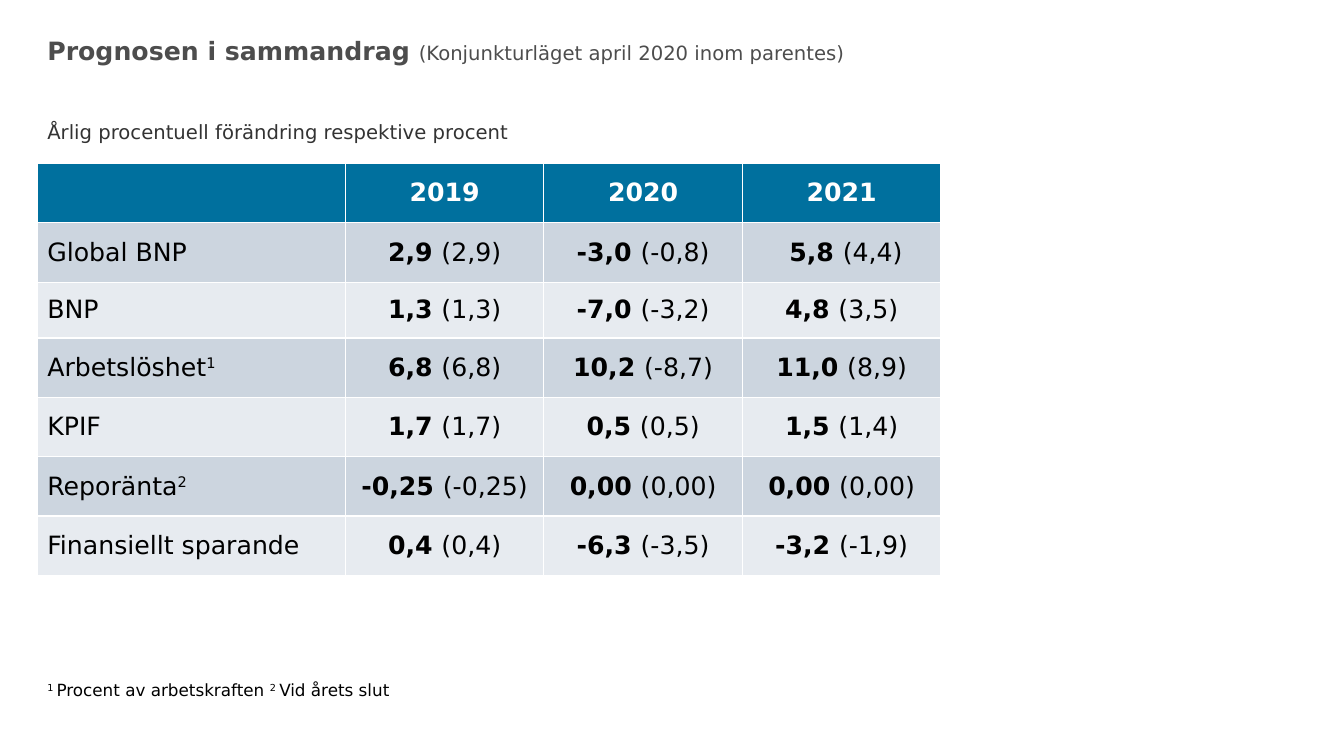
import pptx
import pptx.dml.color
import pptx.enum.text
import pptx.util

Pt = pptx.util.Pt
ALIGN = pptx.enum.text.PP_ALIGN
ANCHOR = pptx.enum.text.MSO_ANCHOR

ROWS = [
    ("Global BNP", "", ["2,9 (2,9)", "-3,0 (-0,8)", " 5,8 (4,4)"]),
    ("BNP", "", ["1,3 (1,3)", "-7,0 (-3,2)", "4,8 (3,5)"]),
    ("Arbetslöshet", "1", ["6,8 (6,8)", "10,2 (-8,7)", "11,0 (8,9)"]),
    ("KPIF", "", ["1,7 (1,7)", "0,5 (0,5)", "1,5 (1,4)"]),
    ("Reporänta", "2", ["-0,25 (-0,25)", "0,00 (0,00)", "0,00 (0,00)"]),
    ("Finansiellt sparande", "", ["0,4 (0,4)", "-6,3 (-3,5)", "-3,2 (-1,9)"]),
]


def rgb(value):
    return pptx.dml.color.RGBColor.from_string(value)


class Deck:
    font = "DejaVu Sans"
    left = 26.6
    header_fill = "00709E"
    band_fills = ("CCD5DF", "E7EBF0")

    def __init__(self, width, height):
        self.prs = pptx.Presentation()
        self.prs.slide_width, self.prs.slide_height = Pt(width), Pt(height)

    def add_slide(self, layout):
        self.s = self.prs.slides.add_slide(self.prs.slide_layouts[layout])

    def fill_text(self, p, runs, size, color, align=ALIGN.LEFT, bold=False):
        p.alignment = align
        p.space_before = Pt(0)
        p.font.name = self.font
        p.font.size = Pt(size)
        p.font.bold = bold
        p.font.color.rgb = rgb(color)
        for text, style in runs:
            r = p.add_run()
            r.text = text
            if "bold" in style:
                r.font.bold = style["bold"]
            if "size" in style:
                r.font.size = Pt(style["size"])
            if style.get("sup"):
                r._r.get_or_add_rPr().set("baseline", "30000")

    def placeholder(self, idx, top, height, runs, size, color, anchor=ANCHOR.TOP):
        sp = self.s.placeholders[idx]
        sp.left, sp.top = Pt(self.left), Pt(top)
        sp.width, sp.height = Pt(682), Pt(height)
        tf = sp.text_frame
        tf.auto_size = pptx.enum.text.MSO_AUTO_SIZE.NONE
        tf.vertical_anchor = anchor
        self.fill_text(tf.paragraphs[0], runs, size, color)

    def cell(self, cell, runs, fill, color="000000", **style):
        cell.fill.solid()
        cell.fill.fore_color.rgb = rgb(fill)
        cell.vertical_anchor = ANCHOR.MIDDLE
        self.fill_text(cell.text_frame.paragraphs[0], runs, 18, color, **style)

    def table(self, top, widths, heights, header, rows):
        table = self.s.shapes.add_table(
            len(heights), len(widths), Pt(self.left), Pt(top),
            Pt(sum(widths)), Pt(sum(heights))).table
        for column, width in zip(table.columns, widths):
            column.width = Pt(width)
        for row, height in zip(table.rows, heights):
            row.height = Pt(height)
        for j, year in enumerate(header):
            runs = [(year, {})] if year else []
            self.cell(table.cell(0, j), runs, self.header_fill, "FFFFFF",
                      align=ALIGN.CENTER, bold=True)
        for i, (label, note, values) in enumerate(rows, 1):
            fill = self.band_fills[(i - 1) % 2]
            runs = [(label, {})] + ([(note, {"sup": True})] if note else [])
            self.cell(table.cell(i, 0), runs, fill)
            for j, value in enumerate(values, 1):
                current, previous = value.split("(")
                runs = [(current, {"bold": True}), ("(" + previous, {})]
                self.cell(table.cell(i, j), runs, fill, align=ALIGN.CENTER)

    def drop_empty(self):
        for sp in list(self.s.placeholders):
            if sp.has_text_frame and not sp.text_frame.text:
                sp.element.getparent().remove(sp.element)


def main():
    deck = Deck(960, 540)
    deck.add_slide(4)
    deck.placeholder(0, 21.6, 39.6, [
        ("Prognosen i sammandrag ", {"size": 18, "bold": True}),
        ("(Konjunkturläget april 2020 inom parentes)", {}),
    ], 14, "4D4D4D")
    deck.placeholder(1, 66.2, 39.6, [
        ("Årlig procentuell förändring respektive procent", {}),
    ], 14, "333333", ANCHOR.BOTTOM)
    deck.placeholder(3, 481.7, 49, [
        ("1 ", {"sup": True}),
        ("Procent av arbetskraften ", {}),
        ("2 ", {"sup": True}),
        ("Vid årets slut", {}),
    ], 12, "000000")
    deck.table(116.8, [220.1] + [141.8] * 3, [42.4] * 2 + [39.9] + [42.4] * 4,
               ["", "2019", "2020", "2021"], ROWS)
    deck.drop_empty()
    deck.prs.save("out.pptx")


if __name__ == "__main__":
    main()
